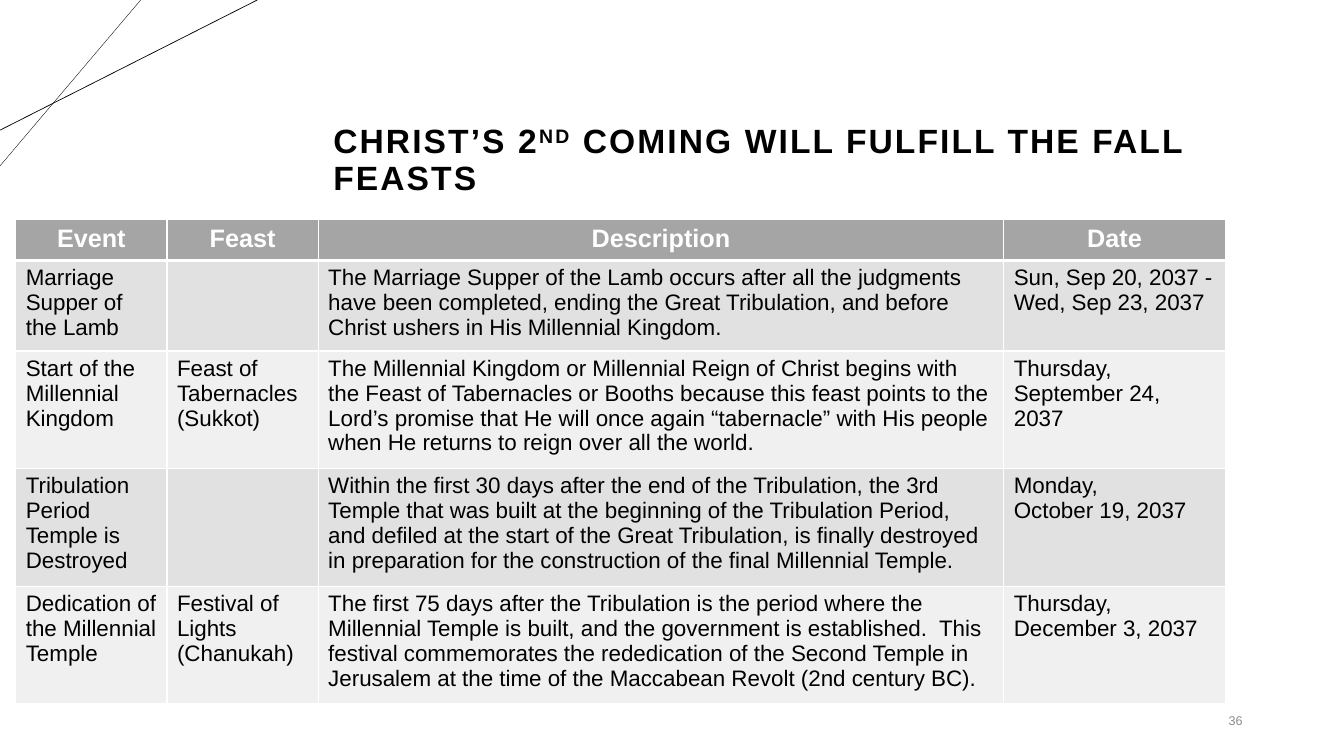
from dataclasses import dataclass

from lxml.etree import SubElement
from pptx import Presentation
from pptx.dml.color import RGBColor
from pptx.enum.shapes import MSO_CONNECTOR
from pptx.enum.text import MSO_ANCHOR, PP_ALIGN
from pptx.oxml.ns import qn
from pptx.util import Pt

PX = 9525


@dataclass(frozen=True)
class Theme:
    font: str = "Arial"
    ink: str = "000000"
    paper: str = "FFFFFF"
    header: str = "A5A5A5"
    bands: tuple = ("E1E1E1", "F0F0F0")
    muted: str = "8C8C8C"
    title_size: int = 24
    header_size: int = 18
    body_size: int = 16
    number_size: int = 9


THEME = Theme()

COLUMN_WIDTHS = (144, 144, 653, 211)
ROW_HEIGHTS = (39, 81, 105, 105, 105)
HEADINGS = ("Event", "Feast", "Description", "Date")
EVENTS = (
    ("Marriage Supper of the Lamb", "",
     "The Marriage Supper of the Lamb occurs after all the judgments have been "
     "completed, ending the Great Tribulation, and before Christ ushers in His "
     "Millennial Kingdom.",
     "Sun, Sep 20, 2037 - Wed, Sep 23, 2037"),
    ("Start of the Millennial Kingdom", "Feast of Tabernacles (Sukkot)",
     "The Millennial Kingdom or Millennial Reign of Christ begins with the Feast of "
     "Tabernacles or Booths because this feast points to the Lord’s promise that He "
     "will once again “tabernacle” with His people when He returns to reign over all "
     "the world.",
     "Thursday,\nSeptember 24, 2037"),
    ("Tribulation Period Temple is Destroyed", "",
     "Within the first 30 days after the end of the Tribulation, the 3rd Temple that "
     "was built at the beginning of the Tribulation Period, and defiled at the start "
     "of the Great Tribulation, is finally destroyed in preparation for the "
     "construction of the final Millennial Temple.",
     "Monday,\nOctober 19, 2037"),
    ("Dedication of the Millennial Temple", "Festival of Lights (Chanukah)",
     "The first 75 days after the Tribulation is the period where the Millennial "
     "Temple is built, and the government is established.  This festival commemorates "
     "the rededication of the Second Temple in Jerusalem at the time of the Maccabean "
     "Revolt (2nd century BC).",
     "Thursday,\nDecember 3, 2037"),
)


def to_emu(*lengths):
    return [length * PX for length in lengths]


def add_run(paragraph, text, size, color, bold=False):
    run = paragraph.add_run()
    run.text = text
    run.font.name = THEME.font
    run.font.size = Pt(size)
    run.font.bold = bold
    run.font.color.rgb = RGBColor.from_string(color)
    return run


def add_text_box(slide, box):
    """Add a wrapping, vertically centred text box and return its first paragraph."""
    frame = slide.shapes.add_textbox(*to_emu(*box)).text_frame
    frame.word_wrap = True
    frame.vertical_anchor = MSO_ANCHOR.MIDDLE
    return frame.paragraphs[0]


def add_corner_lines(slide, box):
    """Cross two thin lines, each running from the top edge to the left edge."""
    left, top, width, height = box
    for start_x, end_y, weight in ((width * 55 // 100, height, 0.25),
                                   (width, height * 79 // 100, 0.5)):
        line = slide.shapes.add_connector(
            MSO_CONNECTOR.STRAIGHT,
            *to_emu(left + start_x, top, left, top + end_y))
        line.line.color.rgb = RGBColor.from_string(THEME.ink)
        line.line.width = Pt(weight)
        SubElement(line._element.spPr, qn("a:effectLst"))


def add_title(slide, box):
    paragraph = add_text_box(slide, box)
    paragraph.line_spacing = 0.9
    for text, baseline in (("CHRIST’S 2", 0), ("ND", 30000),
                           (" COMING WILL FULFILL THE FALL FEASTS", 0)):
        run = add_run(paragraph, text, THEME.title_size, THEME.ink, bold=True)
        properties = run._r.get_or_add_rPr()
        properties.set("spc", "150")
        properties.set("baseline", str(baseline))


def add_slide_number(slide, box):
    paragraph = add_text_box(slide, box)
    paragraph.alignment = PP_ALIGN.RIGHT
    add_run(paragraph, "36", THEME.number_size, THEME.muted)


def set_borders(cell, top, bottom):
    """Draw the cell's borders; top and bottom are widths in points."""
    properties = cell._tc.get_or_add_tcPr()
    for side, width in (("L", 1), ("R", 1), ("T", top), ("B", bottom)):
        border = SubElement(properties, qn(f"a:ln{side}"), w=str(Pt(width)))
        fill = SubElement(border, qn("a:solidFill"))
        SubElement(fill, qn("a:srgbClr"), val=THEME.paper)


def fill_cell(cell, text, row_index):
    is_header = row_index == 0
    set_borders(cell, top=3 if row_index == 1 else 1, bottom=3 if is_header else 1)
    color = THEME.header if is_header else THEME.bands[(row_index - 1) % 2]
    cell.fill.solid()
    cell.fill.fore_color.rgb = RGBColor.from_string(color)
    if not text:
        return
    frame = cell.text_frame
    for index, line in enumerate(text.split("\n")):
        paragraph = frame.add_paragraph() if index else frame.paragraphs[0]
        if is_header:
            paragraph.alignment = PP_ALIGN.CENTER
            add_run(paragraph, line, THEME.header_size, THEME.paper, bold=True)
        else:
            add_run(paragraph, line, THEME.body_size, THEME.ink)


def add_events_table(slide, left, top):
    rows = (HEADINGS, *EVENTS)
    box = to_emu(left, top, sum(COLUMN_WIDTHS), sum(ROW_HEIGHTS))
    table = slide.shapes.add_table(len(rows), len(HEADINGS), *box).table
    for column, width in zip(table.columns, COLUMN_WIDTHS):
        column.width = width * PX
    for row_index, (row, height, texts) in enumerate(zip(table.rows, ROW_HEIGHTS, rows)):
        row.height = height * PX
        for cell, text in zip(row.cells, texts):
            fill_cell(cell, text, row_index)


def main():
    presentation = Presentation()
    presentation.slide_width, presentation.slide_height = to_emu(1280, 720)
    slide = presentation.slides.add_slide(presentation.slide_layouts[6])
    add_corner_lines(slide, (0, 0, 245, 158))
    add_slide_number(slide, (1089, 667, 104, 38))
    add_title(slide, (308, 60, 884, 187))
    add_events_table(slide, 15, 209)
    presentation.save("out.pptx")


if __name__ == "__main__":
    main()
